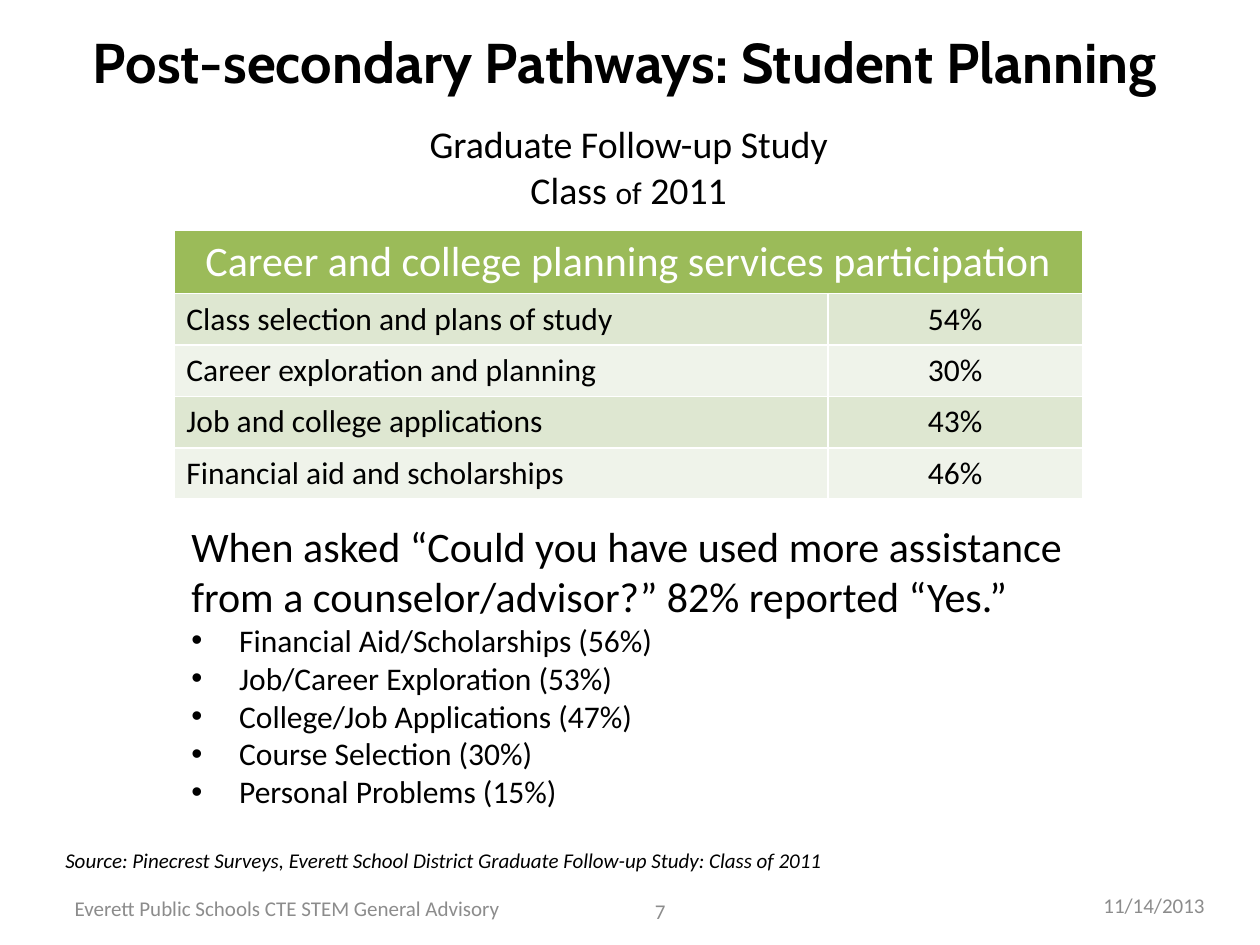
import pptx
import pptx.dml.color
import pptx.enum.text
import pptx.oxml
import pptx.oxml.ns
import pptx.util

COLUMNS, ROWS = 100, 75
COLORS = {"ink": "000000", "muted": "8C8C8C", "white": "FFFFFF",
          "header": "9BBB59", "band_dark": "DEE7D1", "band_light": "EFF3EA"}
ALIGN = pptx.enum.text.PP_ALIGN
ANCHOR = pptx.enum.text.MSO_ANCHOR

SERVICES = [("Class selection and plans of study", "54%"),
            ("Career exploration and planning", "30%"),
            ("Job and college applications", "43%"),
            ("Financial aid and scholarships", "46%")]
NEEDS = ["Financial Aid/Scholarships (56%)", "Job/Career Exploration (53%)",
         "College/Job Applications (47%)", "Course Selection (30%)",
         "Personal Problems (15%)"]


def rgb(name):
    """Return the named palette colour."""
    return pptx.dml.color.RGBColor.from_string(COLORS[name])


def grid_box(prs, left, top, width, height):
    """Convert grid columns and rows to slide lengths."""
    col, row = prs.slide_width / COLUMNS, prs.slide_height / ROWS
    return [round(v) for v in (left * col, top * row, width * col, height * row)]


def write(p, text, size=18, color="ink", font="Calibri", bold=False,
          italic=False, align=ALIGN.LEFT):
    """Add a formatted run to a paragraph."""
    p.alignment = align
    r = p.add_run()
    r.text = text
    r.font.size = pptx.util.Pt(size)
    r.font.name = font
    r.font.bold = bold
    r.font.italic = italic
    r.font.color.rgb = rgb(color)


def add_frame(slide, box, anchor=ANCHOR.TOP, wrap=True):
    """Add a text box and return its text frame."""
    tf = slide.shapes.add_textbox(*box).text_frame
    tf.word_wrap = wrap
    tf.vertical_anchor = anchor
    return tf


def add_line(slide, box, text, anchor=ANCHOR.TOP, wrap=True, **fmt):
    """Place a single paragraph in a box."""
    write(add_frame(slide, box, anchor, wrap).paragraphs[0], text, **fmt)


def add_subtitle(slide, box):
    """Place the study name above its class year."""
    p = add_frame(slide, box, ANCHOR.MIDDLE).paragraphs[0]
    write(p, "Graduate Follow-up Study", size=21.6, align=ALIGN.CENTER)
    p.add_line_break()
    for text, size in (("Class ", 21.6), ("of", 18), (" 2011", 21.6)):
        write(p, text, size=size, align=ALIGN.CENTER)


def style_cell(cell, fill):
    """Give a cell white borders and a solid fill."""
    tc_pr = cell._tc.get_or_add_tcPr()
    for side in ("lnL", "lnR", "lnT", "lnB"):
        tc_pr.append(pptx.oxml.parse_xml(
            f'<a:{side} {pptx.oxml.ns.nsdecls("a")} w="12700"><a:solidFill>'
            f'<a:srgbClr val="{COLORS["white"]}"/></a:solidFill></a:{side}>'))
    cell.fill.solid()
    cell.fill.fore_color.rgb = rgb(fill)


def add_services(slide, box):
    """Place the participation table."""
    width, height = box[2:]
    table = slide.shapes.add_table(len(SERVICES) + 1, 2, *box).table
    for col, share in zip(table.columns, (0.72, 0.28)):
        col.width = round(width * share)
    header_height = round(height * 0.23)
    for i, row in enumerate(table.rows):
        row.height = (round((height - header_height) / len(SERVICES))
                      if i else header_height)
        fill = ("band_dark" if i % 2 else "band_light") if i else "header"
        for cell in row.cells:
            style_cell(cell, fill)
    header = table.cell(0, 0)
    header.merge(table.cell(0, 1))
    write(header.text_frame.paragraphs[0],
          "Career and college planning services participation",
          size=24, color="white", align=ALIGN.CENTER)
    for i, values in enumerate(SERVICES, 1):
        for j, (text, align) in enumerate(zip(values, (ALIGN.LEFT, ALIGN.CENTER))):
            cell = table.cell(i, j)
            cell.vertical_anchor = ANCHOR.MIDDLE
            write(cell.text_frame.paragraphs[0], text, align=align)


def add_needs(slide, box):
    """Place the survey question and its bulleted answers."""
    tf = add_frame(slide, box)
    write(tf.paragraphs[0], "When asked “Could you have used more assistance from "
          "a counselor/advisor?” 82% reported “Yes.”", size=24)
    indent = pptx.util.Inches(0.38)
    for need in NEEDS:
        p = tf.add_paragraph()
        write(p, need)
        p_pr = p._p.get_or_add_pPr()
        p_pr.set("marL", str(indent))
        p_pr.set("indent", str(-indent))
        for bullet in ('buFont {} typeface="Arial"', 'buChar {} char="•"'):
            p_pr.append(pptx.oxml.parse_xml(
                f'<a:{bullet.format(pptx.oxml.ns.nsdecls("a"))}/>'))


def add_footer(prs, slide):
    """Place the organisation, page number and date."""
    parts = [((0.6, 70.1, 44.4, 4), "Everett Public Schools CTE STEM General Advisory",
              ALIGN.CENTER),
             ((47.1, 70.3, 6.7, 4), "7", ALIGN.RIGHT),
             ((73.3, 69.8, 23.3, 4), "11/14/2013", ALIGN.RIGHT)]
    for box, text, align in parts:
        add_line(slide, grid_box(prs, *box), text, anchor=ANCHOR.MIDDLE,
                 size=12, color="muted", align=align)


def main():
    """Build and save the slide."""
    prs = pptx.Presentation()
    prs.slide_width = pptx.util.Inches(10)
    prs.slide_height = pptx.util.Inches(7.5)
    slide = prs.slides.add_slide(prs.slide_layouts[6])
    add_line(slide, grid_box(prs, 0, 1.7, 99.2, 6.4),
             "Post-secondary Pathways: Student Planning",
             size=32, font="Cabin", bold=True, align=ALIGN.CENTER)
    add_subtitle(slide, grid_box(prs, 4.9, 9.2, 90, 8))
    add_services(slide, grid_box(prs, 13.8, 18.3, 72.1, 21.2))
    add_needs(slide, grid_box(prs, 14.2, 40.8, 72.5, 24.2))
    add_line(slide, grid_box(prs, 4.2, 66.8, 63.7, 3),
             "Source: Pinecrest Surveys, Everett School District Graduate "
             "Follow-up Study: Class of 2011", wrap=False, size=12, italic=True)
    add_footer(prs, slide)
    prs.save("out.pptx")


if __name__ == "__main__":
    main()
